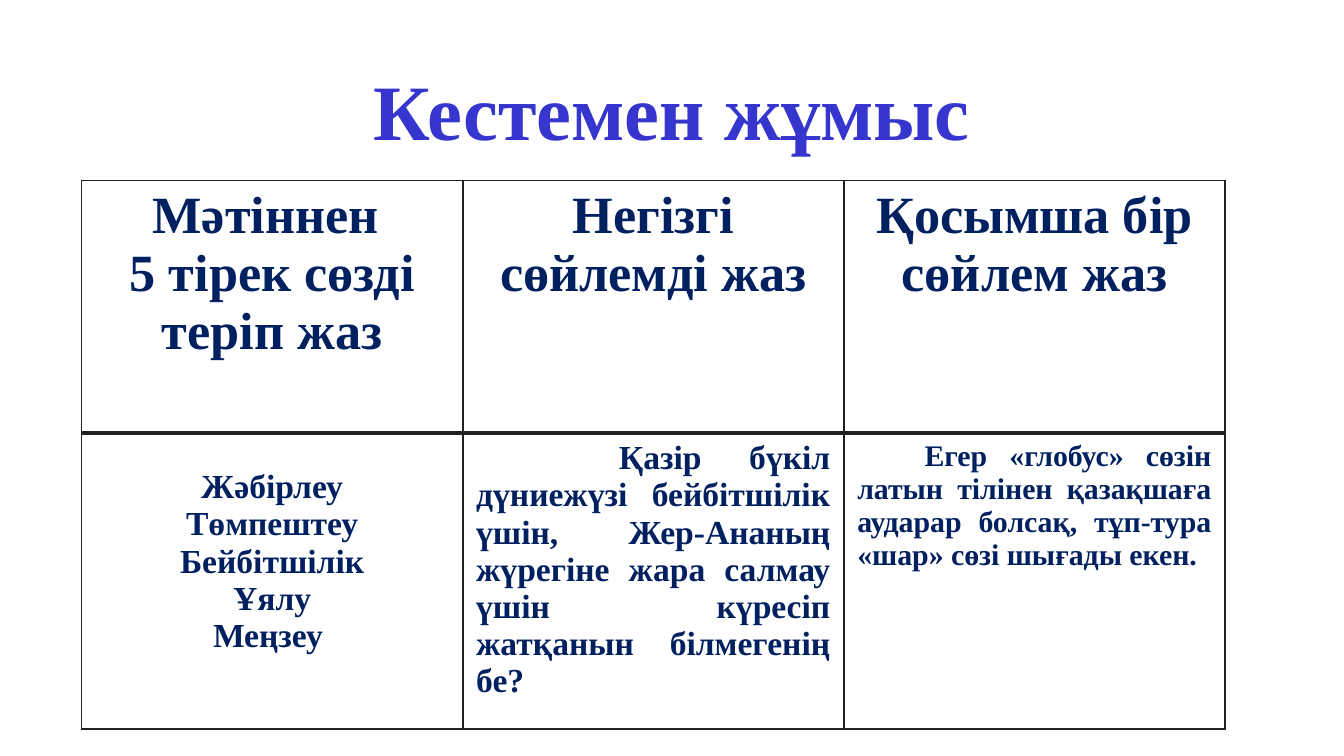
from lxml import etree
from pptx import Presentation
from pptx.dml.color import RGBColor
from pptx.enum import text as t
from pptx.oxml import ns
from pptx.util import Pt

FONT = "Times New Roman"
BLUE = RGBColor(0x36, 0x36, 0xCF)
NAVY = RGBColor(0x00, 0x20, 0x60)
DARK = RGBColor(0x21, 0x21, 0x21)
MID, JUST = t.PP_ALIGN.CENTER, t.PP_ALIGN.JUSTIFY

# Each cell: paragraphs, size, alignment, first-line indent, extra top space
CELLS = [
    [
        (["Мәтіннен ", "5 тірек сөзді теріп жаз"], 28, MID, 0, 0),
        (["Негізгі сөйлемді жаз"], 28, MID, 0, 0),
        (["Қосымша бір сөйлем жаз"], 28, MID, 0, 0),
    ],
    [
        (["Жәбірлеу", "Төмпештеу", "Бейбітшілік", "Ұялу", "Меңзеу "],
         18, MID, 0, 15.5),
        (["Қазір бүкіл дүниежүзі бейбітшілік үшін, Жер-Ананың жүрегіне "
          "жара салмау үшін күресіп жатқанын білмегенің бе?"],
         18, JUST, 76.5, 0),
        (["Егер «глобус» сөзін латын тілінен қазақшаға аударар болсақ, "
          "тұп-тура «шар» сөзі шығады екен."], 16, JUST, 36, 0),
    ],
]


def write(frame, lines, size, color, align, indent=0):
    frame.text = "\n".join(lines)
    for para in frame.paragraphs:
        para.alignment = align
        if indent:
            props = para._p.get_or_add_pPr()
            props.set("marL", "0")
            props.set("indent", str(Pt(indent)))
        for run in para.runs:
            font = run.font
            font.name, font.size, font.bold = FONT, Pt(size), True
            font.color.rgb = color


def border(cell, sides):
    """Draw cell edges from a dict of side tag to width in points."""
    props = cell._tc.get_or_add_tcPr()
    for i, (side, width) in enumerate(sides.items()):
        line = etree.Element(ns.qn("a:" + side), w=str(Pt(width)))
        fill = etree.SubElement(line, ns.qn("a:solidFill"))
        etree.SubElement(fill, ns.qn("a:srgbClr"), val=str(DARK))
        props.insert(i, line)


def add_title(slide, x, y, w, h):
    frame = slide.shapes.add_textbox(Pt(x), Pt(y), Pt(w), Pt(h)).text_frame
    frame.word_wrap = True
    frame.vertical_anchor = t.MSO_ANCHOR.MIDDLE
    frame.margin_left = frame.margin_right = Pt(7.2)
    frame.margin_top = frame.margin_bottom = Pt(7.2)
    write(frame, ["Кестемен жұмыс"], 42, BLUE, MID)
    frame.paragraphs[0].line_spacing = 1.15


def add_grid(slide, x, y, w, h):
    rows, cols = len(CELLS), len(CELLS[0])
    table = slide.shapes.add_table(
        rows, cols, Pt(x), Pt(y), Pt(w), Pt(h)).table
    table.first_row = table.horz_banding = False
    for r, row in enumerate(CELLS):
        for c, (lines, size, align, indent, extra) in enumerate(row):
            cell = table.cell(r, c)
            cell.margin_top = Pt(3.6 + extra)
            cell.fill.background()
            write(cell.text_frame, lines, size, NAVY, align, indent)
            inner = 2 if rows > 1 else 1
            border(cell, {
                "lnL": 1,
                "lnR": 1,
                "lnT": inner if r else 1,
                "lnB": inner if r < rows - 1 else 1,
            })


def main():
    deck = Presentation()
    deck.slide_width, deck.slide_height = Pt(720), Pt(405)
    slide = deck.slides.add_slide(deck.slide_layouts[6])
    add_title(slide, 24.5, 23, 671, 63.4)
    add_grid(slide, 43.7, 96.6, 612.6, 270.8)
    deck.save("out.pptx")


if __name__ == "__main__":
    main()
